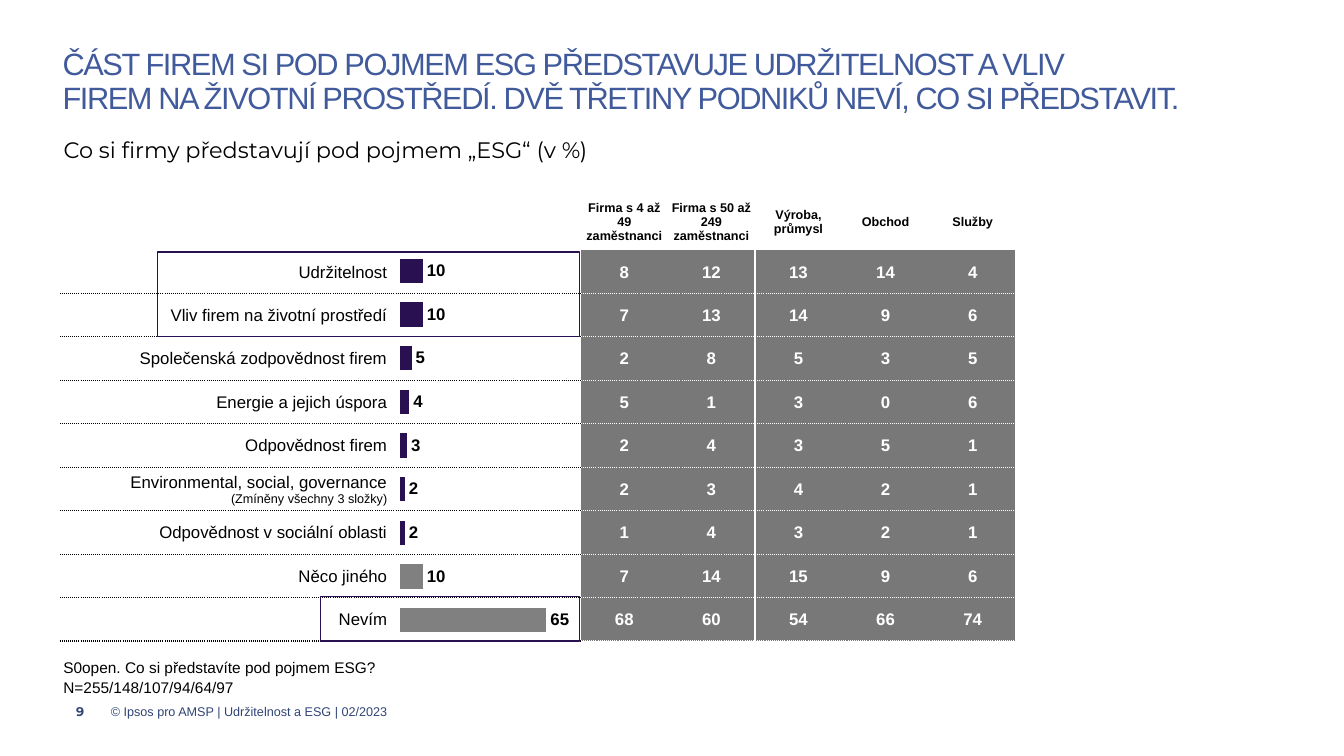
from dataclasses import dataclass
from lxml.etree import SubElement
from pptx import Presentation
from pptx.chart.data import CategoryChartData
from pptx.dml.color import RGBColor
from pptx.enum.chart import XL_CHART_TYPE, XL_LABEL_POSITION
from pptx.enum.shapes import MSO_SHAPE
from pptx.enum.text import MSO_ANCHOR, PP_ALIGN
from pptx.oxml import parse_xml
from pptx.oxml.ns import nsdecls, qn
from pptx.util import Inches, Pt


@dataclass(frozen=True)
class Theme:
    title_color: str = "405A9C"
    footer_color: str = "304475"
    accent: str = "281051"
    other_bar: str = "808080"
    cell_fill: str = "787878"
    black: str = "000000"
    white: str = "FFFFFF"
    font: str = "Arial"
    accent_font: str = "Montserrat"
    title_size: int = 22
    subtitle_size: int = 16
    body_size: int = 12
    note_size: int = 11
    small_size: int = 9


THEME = Theme()
HEADERS = ["Firma s 4 až 49 zaměstnanci", "Firma s 50 až 249 zaměstnanci",
           "Výroba, průmysl", "Obchod", "Služby"]
# Label, share of all firms, shares by firm group
ANSWERS = [
    ("Udržitelnost", 10, [8, 12, 13, 14, 4]),
    ("Vliv firem na životní prostředí", 10, [7, 13, 14, 9, 6]),
    ("Společenská zodpovědnost firem", 5, [2, 8, 5, 3, 5]),
    ("Energie a jejich úspora", 4, [5, 1, 3, 0, 6]),
    ("Odpovědnost firem", 3, [2, 4, 3, 5, 1]),
    ("Environmental, social, governance", 2, [2, 3, 4, 2, 1]),
    ("Odpovědnost v sociální oblasti", 2, [1, 4, 3, 2, 1]),
    ("Něco jiného", 10, [7, 14, 15, 9, 6]),
    ("Nevím", 65, [68, 60, 54, 66, 74]),
]
SUBLABELS = {"Environmental, social, governance": "(Zmíněny všechny 3 složky)"}
OTHER_BARS = (7, 8)


def format_font(font, size, color=THEME.black, name=THEME.font, bold=False):
    font.size, font.name, font.bold = Pt(size), name, bold
    font.color.rgb = RGBColor.from_string(color)


def write_text(paragraph, text, align=PP_ALIGN.LEFT, line_spacing=None, tracking=None, **font_format):
    paragraph.alignment = align
    if line_spacing:
        paragraph.line_spacing = line_spacing
    for index, line in enumerate(text.split("\n")):
        if index:
            paragraph.add_line_break()
        run = paragraph.add_run()
        run.text = line
        format_font(run.font, **font_format)
        if tracking:
            run._r.get_or_add_rPr().set("spc", str(tracking))


def set_margins(target, left, top, right, bottom):
    target.margin_left, target.margin_top = Inches(left), Inches(top)
    target.margin_right, target.margin_bottom = Inches(right), Inches(bottom)


def set_borders(cell, borders):
    """Draw the given sides as (color, points, dash); clear the others."""
    properties = cell._tc.get_or_add_tcPr()
    for position, side in enumerate(("L", "R", "T", "B")):
        line = SubElement(properties, qn(f"a:ln{side}"))
        properties.remove(line)
        properties.insert(position, line)
        if side not in borders:
            SubElement(line, qn("a:noFill"))
            continue
        color, points, dash = borders[side]
        line.set("w", str(Pt(points)))
        fill = SubElement(line, qn("a:solidFill"))
        SubElement(fill, qn("a:srgbClr")).set("val", color)
        SubElement(line, qn("a:prstDash")).set("val", dash)


class SlideBuilder:
    def __init__(self, slide, theme):
        self.slide, self.theme = slide, theme

    def title(self, box, text):
        shape = self.slide.shapes.title
        shape.left, shape.top, shape.width, shape.height = map(Inches, box)
        frame = shape.text_frame
        frame.word_wrap, frame.vertical_anchor = True, MSO_ANCHOR.TOP
        set_margins(frame, 0.18, 0.05, 0.18, 0.05)
        write_text(frame.paragraphs[0], text, line_spacing=0.9, tracking=-100,
                   size=self.theme.title_size, color=self.theme.title_color)

    def text_box(self, box, text, margins, anchor=MSO_ANCHOR.TOP, **text_format):
        frame = self.slide.shapes.add_textbox(*map(Inches, box)).text_frame
        frame.word_wrap, frame.vertical_anchor = True, anchor
        set_margins(frame, *margins)
        write_text(frame.paragraphs[0], text, **text_format)

    def frame_box(self, box):
        shape = self.slide.shapes.add_shape(MSO_SHAPE.RECTANGLE, *map(Inches, box))
        shape.shadow.inherit = False
        shape.fill.background()
        shape.line.color.rgb = RGBColor.from_string(self.theme.accent)
        shape.line.width = Pt(1)

    def cell_borders(self, row, column):
        borders = {}
        color = self.theme.black if column < 2 else self.theme.white
        if row > 0:
            borders["B"] = (color, 1, "sysDot")
        if row > 1:
            borders["T"] = (color, 1, "sysDot")
        if column == 3:
            borders["R"] = (self.theme.white, 2.25, "solid")
        if column == 4:
            borders["L"] = (self.theme.white, 2.25, "solid")
        if column == 6:
            borders["R"] = (self.theme.white, 1.5, "solid")
        return borders

    def answer_table(self, box):
        theme = self.theme
        left, top, width, height = box
        label_widths, header_height = [3.26, 1.91], 0.56
        rows = [["", "", *HEADERS]] + [[label, "", *shares] for label, _, shares in ANSWERS]
        table = self.slide.shapes.add_table(len(rows), len(rows[0]), *map(Inches, box)).table
        table.first_row = table.horz_banding = False
        group_width = (width - sum(label_widths)) / len(HEADERS)
        for column, column_width in zip(table.columns, label_widths + [group_width] * len(HEADERS)):
            column.width = Inches(column_width)
        for index, row in enumerate(table.rows):
            row.height = Inches((height - header_height) / len(ANSWERS) if index else header_height)

        for row, values in enumerate(rows):
            for column, value in enumerate(values):
                cell = table.cell(row, column)
                cell.vertical_anchor = MSO_ANCHOR.MIDDLE
                set_margins(cell, 0.01, 0.01, 0.01, 0)
                is_share = row > 0 and column > 1
                if is_share:
                    cell.fill.solid()
                    cell.fill.fore_color.rgb = RGBColor.from_string(theme.cell_fill)
                else:
                    cell.fill.background()
                set_borders(cell, self.cell_borders(row, column))
                if value == "":
                    continue
                write_text(cell.text_frame.paragraphs[0], str(value),
                           align=PP_ALIGN.CENTER if column else PP_ALIGN.RIGHT,
                           size=theme.body_size if row else theme.small_size,
                           color=theme.white if is_share else theme.black, bold=column > 1)
                if value in SUBLABELS:
                    write_text(cell.text_frame.add_paragraph(), SUBLABELS[value],
                               align=PP_ALIGN.RIGHT, size=theme.small_size)

    def share_chart(self, box):
        theme = self.theme
        data = CategoryChartData(number_format="#,##0")
        data.categories = [str(number) for number in range(1, len(ANSWERS) + 1)]
        data.add_series("Series 1", [share for _, share, _ in ANSWERS])
        chart = self.slide.shapes.add_chart(XL_CHART_TYPE.BAR_CLUSTERED, *map(Inches, box), data).chart
        chart.has_title = chart.has_legend = False
        format_font(chart.font, theme.note_size)
        chart.category_axis.reverse_order = True
        axis = chart.value_axis
        axis.minimum_scale, axis.maximum_scale, axis.major_unit = 0, 95, 20
        axis.has_major_gridlines = False
        axis.visible = chart.category_axis.visible = False

        # Bars and labels
        plot = chart.plots[0]
        plot.gap_width, plot.vary_by_categories = 80, False
        series = plot.series[0]
        fills = [(series.format.fill, theme.accent)]
        fills += [(series.points[index].format.fill, theme.other_bar) for index in OTHER_BARS]
        for fill, color in fills:
            fill.solid()
            fill.fore_color.rgb = RGBColor.from_string(color)
        labels = series.data_labels
        labels.show_value = True
        labels.position = XL_LABEL_POSITION.OUTSIDE_END
        labels.number_format, labels.number_format_is_linked = "#,##0", False
        format_font(labels.font, theme.body_size, bold=True)

        # Plot area aligned with the table rows
        area = chart._chartSpace.find(".//" + qn("c:plotArea"))
        for layout in area.findall(qn("c:layout")):
            area.remove(layout)
        settings = [("layoutTarget", "inner"), ("xMode", "edge"), ("yMode", "edge"),
                    ("x", 0.117), ("y", 0.122), ("w", 0.883), ("h", 0.878)]
        tags = "".join(f'<c:{name} val="{value}"/>' for name, value in settings)
        area.insert(0, parse_xml(
            f'<c:layout {nsdecls("c")}><c:manualLayout>{tags}</c:manualLayout></c:layout>'))


def main():
    presentation = Presentation()
    presentation.slide_width, presentation.slide_height = Inches(13.33), Inches(7.5)
    slide = presentation.slides.add_slide(presentation.slide_layouts[5])
    builder = SlideBuilder(slide, THEME)

    # Table and bars
    builder.answer_table((0.59, 1.92, 9.49, 4.44))
    builder.share_chart((3.69, 1.93, 2.4, 4.44))

    # Headings
    builder.title((0.44, 0.44, 11.52, 1.1),
                  "ČÁST FIREM SI POD POJMEM ESG PŘEDSTAVUJE UDRŽITELNOST A VLIV\n"
                  "FIREM NA ŽIVOTNÍ PROSTŘEDÍ. DVĚ TŘETINY PODNIKŮ NEVÍ, CO SI PŘEDSTAVIT.")
    builder.text_box((0.63, 1.42, 9.05, 0.21), "Co si firmy představují pod pojmem „ESG“ (v %)",
                     (0, 0, 0, 0), line_spacing=Pt(14), size=THEME.subtitle_size, name=THEME.accent_font)

    # Note and footer
    builder.text_box((0.53, 6.47, 11.36, 0.48),
                     "S0open. Co si představíte pod pojmem ESG?\nN=255/148/107/94/64/97",
                     (0.1, 0.05, 0.1, 0.05), line_spacing=Pt(14), size=THEME.note_size)
    footer = dict(margins=(0, 0.05, 0, 0.05), anchor=MSO_ANCHOR.MIDDLE,
                  size=THEME.small_size, color=THEME.footer_color)
    builder.text_box((0.6, 6.86, 0.39, 0.4), "9", align=PP_ALIGN.CENTER,
                     name=THEME.accent_font, bold=True, **footer)
    builder.text_box((1.1, 6.86, 10.07, 0.4), "© Ipsos pro AMSP | Udržitelnost a ESG | 02/2023", **footer)

    # Highlighted answers
    builder.frame_box((1.56, 2.5, 4.19, 0.84))
    builder.frame_box((3.18, 5.92, 2.57, 0.44))
    presentation.save("out.pptx")


if __name__ == "__main__":
    main()
